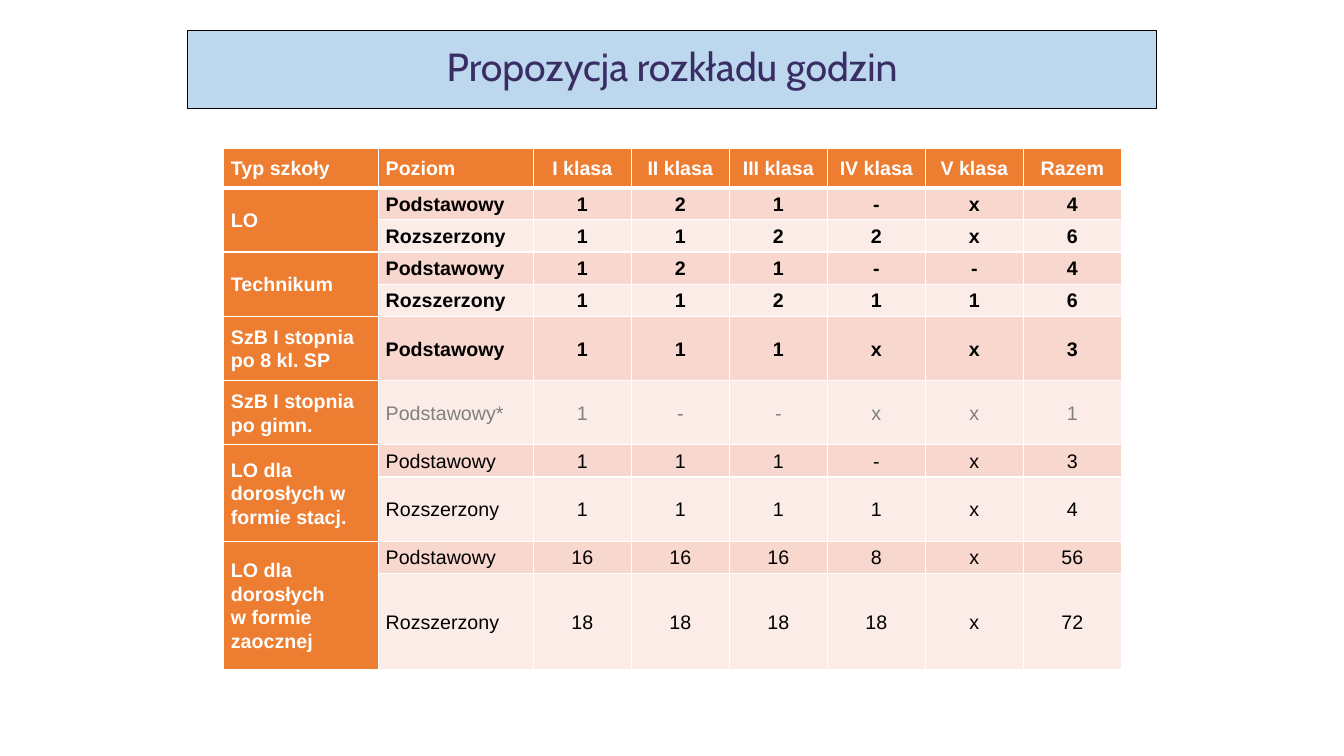
from copy import deepcopy

from lxml import etree
from pptx import Presentation
from pptx import util as u
from pptx.dml.color import RGBColor
from pptx.enum import shapes, text
from pptx.oxml.ns import qn

WHITE = RGBColor(0xFF, 0xFF, 0xFF)
BLACK = RGBColor(0x00, 0x00, 0x00)
GRAY = RGBColor(0x80, 0x80, 0x80)
NAVY = RGBColor(0x39, 0x2E, 0x64)
BLUE = RGBColor(0xBD, 0xD7, 0xEE)
ORANGE = RGBColor(0xED, 0x7D, 0x31)
BANDS = [RGBColor(0xF8, 0xD7, 0xCE), RGBColor(0xFC, 0xEC, 0xE8)]

HEADER = ["Typ szkoły", "Poziom", "I klasa", "II klasa", "III klasa",
          "IV klasa", "V klasa", "Razem"]
# school, level, hours by class and total, height in row units, bold, colour
LEVELS = [
    ("LO", "Podstawowy", "1 2 1 - x 4", 1, True, BLACK),
    ("", "Rozszerzony", "1 1 2 2 x 6", 1, True, BLACK),
    ("Technikum", "Podstawowy", "1 2 1 - - 4", 1, True, BLACK),
    ("", "Rozszerzony", "1 1 2 1 1 6", 1, True, BLACK),
    ("SzB I stopnia po 8 kl. SP", "Podstawowy", "1 1 1 x x 3", 2, True, BLACK),
    ("SzB I stopnia po gimn.", "Podstawowy*", "1 - - x x 1", 2, False, GRAY),
    ("LO dla dorosłych w formie stacj.", "Podstawowy", "1 1 1 - x 3", 1, False, BLACK),
    ("", "Rozszerzony", "1 1 1 1 x 4", 2, False, BLACK),
    ("LO dla dorosłych \nw formie zaocznej", "Podstawowy", "16 16 16 8 x 56", 1, False, BLACK),
    ("", "Rozszerzony", "18 18 18 18 x 72", 3, False, BLACK),
]
ROW_UNIT = 0.81


def write(tf, words, size=14, font="Arial", color=BLACK, bold=False,
          align=text.PP_ALIGN.LEFT, spacing=1.07):
    p = tf.paragraphs[0]
    p.text = words
    p.alignment = align
    p.line_spacing = spacing
    for r in p.runs:
        r.font.size = u.Pt(size)
        r.font.name = font
        r.font.bold = bold
        r.font.color.rgb = color
    for br in p._p.findall(qn("a:br")):
        br.append(deepcopy(p.runs[0].font._element))


def add_borders(cell, top, bottom):
    """Draw white borders round a cell, one point wide at the sides."""
    tc_pr = cell._tc.get_or_add_tcPr()
    sides = [("L", 1), ("R", 1), ("T", top), ("B", bottom)]
    for i, (side, width) in enumerate(sides):
        ln = etree.Element(qn(f"a:ln{side}"), w=str(u.Pt(width)))
        fill = etree.SubElement(ln, qn("a:solidFill"))
        etree.SubElement(fill, qn("a:srgbClr"), val=str(WHITE))
        tc_pr.insert(i, ln)


prs = Presentation()
prs.slide_width, prs.slide_height = u.Cm(33.87), u.Cm(19.05)
s = prs.slides.add_slide(prs.slide_layouts[6])

title = s.shapes.add_shape(shapes.MSO_SHAPE.RECTANGLE,
                           u.Cm(4.73), u.Cm(0.76), u.Cm(24.41), u.Cm(1.96))
title.shadow.inherit = False
title.fill.solid()
title.fill.fore_color.rgb = BLUE
title.line.color.rgb = BLACK
title.line.width = u.Pt(0.5)
title.text_frame.word_wrap = True
title.text_frame.vertical_anchor = text.MSO_ANCHOR.MIDDLE
write(title.text_frame, "Propozycja rozkładu godzin", size=28, font="Cabin",
      color=NAVY, align=text.PP_ALIGN.CENTER, spacing=0.9)

heights = [1] + [units * ROW_UNIT for _, _, _, units, _, _ in LEVELS]
widths = [3.9] * 2 + [2.47] * 6
table = s.shapes.add_table(len(heights), len(widths), u.Cm(5.64), u.Cm(3.73),
                           u.Cm(sum(widths)), u.Cm(sum(heights))).table
for column, width in zip(table.columns, widths):
    column.width = u.Cm(width)
for row, height in zip(table.rows, heights):
    row.height = u.Cm(height)

rows = [(HEADER, True, WHITE)]
rows += [([school, level, *hours.split()], bold, color)
         for school, level, hours, _, bold, color in LEVELS]
for i, (words, bold, color) in enumerate(rows):
    for j, word in enumerate(words):
        cell = table.cell(i, j)
        heading = i == 0 or j == 0
        cell.fill.solid()
        cell.fill.fore_color.rgb = ORANGE if heading else BANDS[(i - 1) % 2]
        add_borders(cell, top=3 if i == 1 else 1, bottom=3 if i == 0 else 1)
        cell.vertical_anchor = text.MSO_ANCHOR.MIDDLE
        cell.margin_left = cell.margin_right = u.Cm(0.18)
        cell.margin_top = cell.margin_bottom = 0
        if word:
            write(cell.text_frame, word, bold=bold or heading,
                  color=WHITE if heading else color,
                  align=text.PP_ALIGN.CENTER if j > 1 else text.PP_ALIGN.LEFT)
        else:
            table.cell(i - 1, j).merge(cell)

prs.save("out.pptx")
